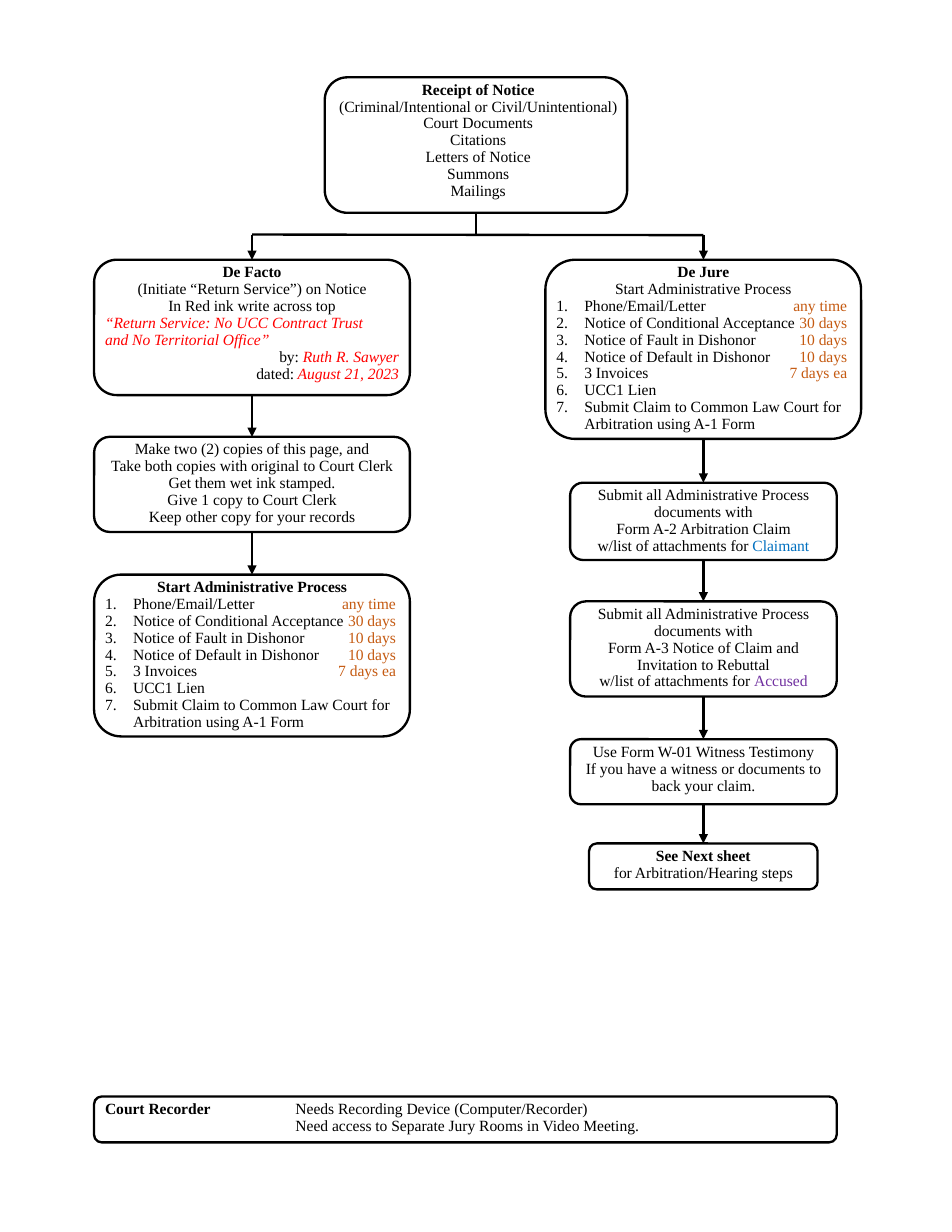
from lxml import etree
from pptx import Presentation
from pptx.dml.color import RGBColor
from pptx.enum.shapes import MSO_CONNECTOR, MSO_SHAPE
from pptx.enum.text import MSO_ANCHOR, MSO_AUTO_SIZE, PP_ALIGN
from pptx.oxml.ns import qn
from pptx.util import Pt

LEFT, CENTER, RIGHT = PP_ALIGN.LEFT, PP_ALIGN.CENTER, PP_ALIGN.RIGHT
TOP, NO_FIT = MSO_ANCHOR.TOP, MSO_AUTO_SIZE.NONE
ROUNDED, STRAIGHT = MSO_SHAPE.ROUNDED_RECTANGLE, MSO_CONNECTOR.STRAIGHT

COLORS = {
    "black": "000000",
    "red": "FF0000",
    "orange": "C55A11",
    "blue": "0070C0",
    "purple": "7030A0",
}
FONT = "Times New Roman"
SIZE = 10
LINE_PITCH = 10.83
LEFT_X, RIGHT_X = 162, 452.2
STEPS = [
    "Phone/Email/Letter",
    "Notice of Conditional Acceptance",
    "Notice of Fault in Dishonor",
    "Notice of Default in Dishonor",
    "3 Invoices",
    "UCC1 Lien",
    "Submit Claim to Common Law Court for Arbitration using A-1 Form",
]
DEADLINES = ["any time", "30 days", "10 days", "10 days", "7 days ea"]


def add_run(p, text, color="black", bold=False, italic=False):
    for i, part in enumerate(text.split("\n")):
        if i:
            p.add_line_break()
        r = p.add_run()
        r.text = part
        r.font.name, r.font.size = FONT, Pt(SIZE)
        r.font.bold, r.font.italic = bold, italic
        r.font.color.rgb = RGBColor.from_string(COLORS[color])


def add_text(tf, text, align=CENTER, numbered=False, tab=None, **fmt):
    p = tf.paragraphs[0]
    if p.runs:
        p = tf.add_paragraph()
    p.alignment = align
    p.line_spacing = 0.9
    pPr = p._p.get_or_add_pPr()
    if numbered:
        pPr.set("marL", str(Pt(18)))
        pPr.set("indent", str(Pt(-18)))
        etree.SubElement(pPr, qn("a:buAutoNum"), type="arabicPeriod")
    if tab:
        tabs = etree.SubElement(pPr, qn("a:tabLst"))
        etree.SubElement(tabs, qn("a:tab"), pos=str(Pt(tab)), algn="l")
    add_run(p, text, **fmt)
    return p


def add_frame(shapes, x, y, w, h):
    sp = shapes.add_shape(ROUNDED, Pt(x), Pt(y), Pt(w), Pt(h))
    sp.shadow.inherit = False
    sp.fill.background()
    sp.line.color.rgb = RGBColor.from_string(COLORS["black"])
    sp.line.width = Pt(1.5)


def add_box(slide, x, y, w, h, lines=(), deadlines_after=None):
    shapes = slide.shapes.add_group_shape().shapes

    def add_textbox(top):
        tf = shapes.add_textbox(Pt(x), Pt(top), Pt(w), Pt(y + h - top)).text_frame
        tf.word_wrap = True
        return tf

    tf = add_textbox(y - 0.5)
    for text, fmt in lines:
        add_text(tf, text, **fmt)
    if deadlines_after:
        side = add_textbox(y - 0.5 + deadlines_after * LINE_PITCH)
        side.margin_right = Pt(9)
        for text in DEADLINES:
            add_text(side, text, align=RIGHT, color="orange")
    add_frame(shapes, x, y, w, h)
    return tf


def add_line(slide, x1, y1, x2, y2, arrow=True):
    line = slide.shapes.add_connector(STRAIGHT, Pt(x1), Pt(y1), Pt(x2), Pt(y2))
    line.line.color.rgb = RGBColor.from_string(COLORS["black"])
    line.line.width = Pt(1.5)
    if arrow:
        etree.SubElement(line.line._get_or_add_ln(), qn("a:tailEnd"), type="triangle")
    etree.SubElement(line._element.spPr, qn("a:effectLst"))


def add_title(slide):
    title, subtitle = slide.placeholders
    subtitle._element.getparent().remove(subtitle._element)
    title.left, title.top, title.width, title.height = Pt(210.2), Pt(49), Pt(194.4), Pt(87)
    tf = title.text_frame
    tf.auto_size, tf.vertical_anchor, tf.word_wrap = NO_FIT, TOP, True
    p = add_text(tf, "Receipt of Notice\n", bold=True)
    add_run(p, "(Criminal/Intentional or Civil/Unintentional)\nCourt Documents\n"
               "Citations\nLetters of Notice\nSummons\nMailings")
    add_frame(slide.shapes, 208.8, 49.7, 194.4, 87.1)


def add_left_column(slide, steps):
    x, w = 60.5, 203
    tf = add_box(slide, x, 167, w, 87, [
        ("De Facto", {"bold": True}),
        ("(Initiate “Return Service”) on Notice", {}),
        ("In Red ink write across top", {}),
    ])
    for text in ("“Return Service: No UCC Contract Trust", "and No Territorial Office”"):
        add_text(tf, text, align=LEFT, color="red", italic=True)
    for label, value in (("by: ", "Ruth R. Sawyer"), ("dated:", " August 21, 2023")):
        add_run(add_text(tf, label, align=RIGHT), value, color="red", italic=True)
    add_box(slide, x, 280.8, w, 61.2, [(text, {}) for text in (
        "Make two (2) copies of this page, and",
        "Take both copies with original to Court Clerk",
        "Get them wet ink stamped.",
        "Give 1 copy to Court Clerk",
        "Keep other copy for your records",
    )])
    heading = [("Start Administrative Process", {"bold": True})]
    add_box(slide, x, 369.4, w, 104, heading + steps, deadlines_after=1)


def add_right_column(slide, steps):
    heading = [("De Jure", {"bold": True}), ("Start Administrative Process", {})]
    add_box(slide, 350.6, 167, 203, 115.2, heading + steps, deadlines_after=2)
    x, w = 366.5, 171.4
    for y, h, form, party, color in (
        (310.3, 49.7, "Form A-2 Arbitration Claim", "Claimant", "blue"),
        (386.6, 61.2, "Form A-3 Notice of Claim and Invitation to Rebuttal", "Accused", "purple"),
    ):
        tf = add_box(slide, x, y, w, h, [
            ("Submit all Administrative Process documents with", {}),
            (form, {}),
        ])
        add_run(add_text(tf, "w/list of attachments for "), party, color=color)
    add_box(slide, x, 475.2, w, 41.8, [
        ("Use Form W-01 Witness Testimony", {}),
        ("If you have a witness or documents to back your claim.", {}),
    ])
    add_box(slide, 378.7, 542.2, 146.9, 29.5, [
        ("See Next sheet", {"bold": True}),
        ("for Arbitration/Hearing steps", {}),
    ])


def add_recorder(slide):
    tf = add_box(slide, 60.5, 704.9, 477.4, 29.5)
    p = add_text(tf, "Court Recorder\t", align=LEFT, tab=122.4, bold=True)
    add_run(p, "Needs Recording Device (Computer/Recorder)")
    add_text(tf, "\tNeed access to Separate Jury Rooms in Video Meeting.", align=LEFT, tab=122.4)


def main():
    prs = Presentation()
    prs.slide_width, prs.slide_height = Pt(612), Pt(792)
    slide = prs.slides.add_slide(prs.slide_layouts[0])
    steps = [(text, {"align": LEFT, "numbered": True}) for text in STEPS]
    add_title(slide)
    add_left_column(slide, steps)
    add_right_column(slide, steps)
    add_recorder(slide)
    add_line(slide, LEFT_X, 150.8, RIGHT_X, 151.2, arrow=False)
    add_line(slide, 306, 136.8, 306, 151.2, arrow=False)
    for x, gaps in (
        (LEFT_X, [(151, 167), (254, 280.8), (342, 369.4)]),
        (RIGHT_X, [(151, 167), (282.2, 310.3), (360, 386.6), (447.8, 475.2), (517, 542.2)]),
    ):
        for start, end in gaps:
            add_line(slide, x, start, x, end)
    prs.save("out.pptx")


if __name__ == "__main__":
    main()
